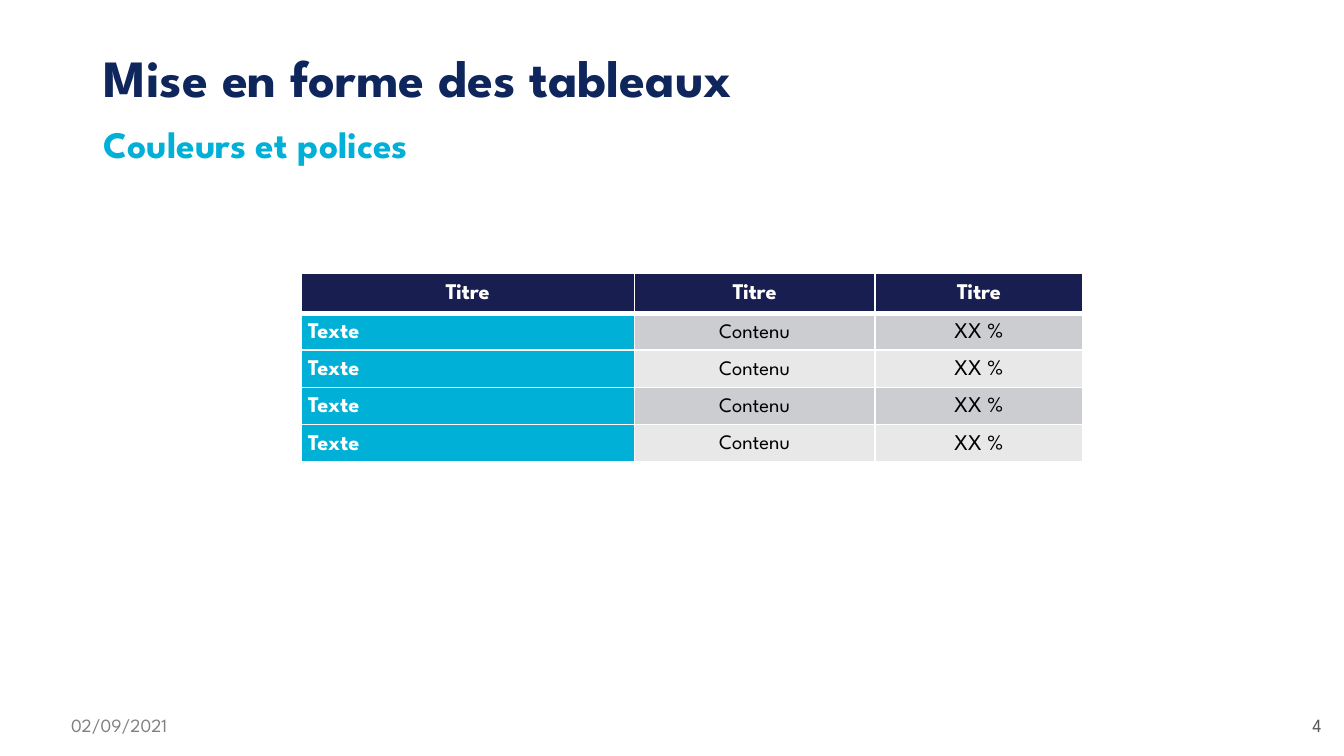
from lxml import etree
from pptx import Presentation
from pptx.dml.color import RGBColor
from pptx.enum.text import MSO_ANCHOR, MSO_AUTO_SIZE, PP_ALIGN
from pptx.oxml.ns import qn
from pptx.util import Inches, Pt

LEFT, CENTER, RIGHT = PP_ALIGN.LEFT, PP_ALIGN.CENTER, PP_ALIGN.RIGHT
TOP, MIDDLE = MSO_ANCHOR.TOP, MSO_ANCHOR.MIDDLE
FIXED = MSO_AUTO_SIZE.NONE

FONT = "League Spartan"
NAVY, CYAN, HEADER_BLUE = "0F265C", "00B0D7", "191E50"
WHITE, BLACK, DATE_GREY, NUMBER_GREY = "FFFFFF", "000000", "808080", "595959"
BANDS = ("CCCDD0", "E8E8E9")

GRID_STEP = Inches(0.1)
GRID_COLUMNS, GRID_ROWS = 100, 56.25

HEADINGS = ["Titre"] * 3
BODY = [["Texte", "Contenu", "XX %"]] * 4


def grid(*steps):
    """Turn grid columns and rows into slide lengths."""
    return [round(step * GRID_STEP) for step in steps]


def colour(hex_code):
    """Return the colour for a hex string."""
    return RGBColor.from_string(hex_code)


def write(frame, text, size=12, ink=BLACK, bold=False, align=LEFT, spacing=1.0):
    """Put one formatted paragraph in a text frame."""
    frame.text = text
    paragraph = frame.paragraphs[0]
    paragraph.alignment = align
    paragraph.line_spacing = spacing
    paragraph.space_before = Pt(0)
    font = paragraph.runs[0].font
    font.name, font.size, font.bold = FONT, Pt(size), bold
    font.color.rgb = colour(ink)


def place_heading(placeholder, box, text, anchor, **style):
    """Move a heading placeholder to its box and fill it."""
    placeholder.left, placeholder.top, placeholder.width, placeholder.height = grid(*box)
    frame = placeholder.text_frame
    frame.auto_size, frame.vertical_anchor, frame.word_wrap = FIXED, anchor, True
    write(frame, text, bold=True, **style)


def add_footer(slide, box, text, **style):
    """Add a small footer text in its box."""
    frame = slide.shapes.add_textbox(*grid(*box)).text_frame
    frame.word_wrap = True
    write(frame, text, size=10, **style)


def border_cell(cell, bottom):
    """Draw white borders around a cell, with the given bottom width."""
    properties = cell._tc.get_or_add_tcPr()
    widths = {"a:lnL": 1, "a:lnR": 1, "a:lnT": 1, "a:lnB": bottom}
    for position, (side, width) in enumerate(widths.items()):
        line = etree.Element(qn(side), w=str(Pt(width)))
        fill = etree.SubElement(line, qn("a:solidFill"))
        etree.SubElement(fill, qn("a:srgbClr"), val=WHITE)
        properties.insert(position, line)


def cell_style(row, column):
    """Return the fill and text format for a table position."""
    if row == 0:
        return HEADER_BLUE, dict(ink=WHITE, bold=True, align=CENTER)
    if column == 0:
        return CYAN, dict(ink=WHITE, bold=True)
    return BANDS[(row - 1) % 2], dict(size=11 if column == 1 else 12, align=CENTER)


def add_styled_table(slide, box, column_widths, header_height, row_height):
    """Add the banded table with its header row and label column."""
    records = [HEADINGS, *BODY]
    table = slide.shapes.add_table(len(records), len(HEADINGS), *grid(*box)).table
    for column, width in zip(table.columns, grid(*column_widths)):
        column.width = width
    for index, record in enumerate(records):
        table.rows[index].height = grid(row_height if index else header_height)[0]
        for position, text in enumerate(record):
            cell = table.cell(index, position)
            fill, style = cell_style(index, position)
            cell.fill.solid()
            cell.fill.fore_color.rgb = colour(fill)
            cell.vertical_anchor = MIDDLE
            cell.margin_left = cell.margin_right = Inches(0.05)
            cell.margin_top = cell.margin_bottom = Inches(0.05)
            write(cell.text_frame, text, spacing=1.15, **style)
            border_cell(cell, bottom=1 if index else 3)


def main():
    """Build and save the slide."""
    deck = Presentation()
    deck.slide_width, deck.slide_height = grid(GRID_COLUMNS, GRID_ROWS)
    slide = deck.slides.add_slide(deck.slide_layouts[0])
    title, subtitle = slide.placeholders
    place_heading(title, (6.7, 2.95, 75.6, 5.5), "Mise en forme des tableaux",
                  MIDDLE, size=28, ink=NAVY)
    place_heading(subtitle, (6.7, 8.5, 75.6, 3.9), "Couleurs et polices",
                  TOP, size=20, ink=CYAN)
    add_styled_table(slide, (22.4, 20.3, 58.2, 13.4), (24.8, 17.9, 15.5), 3, 2.6)
    add_footer(slide, (4.3, 52.65, 10.2, 3), "02/09/2021", ink=DATE_GREY)
    add_footer(slide, (89.4, 52.65, 9.9, 3), "4", ink=NUMBER_GREY, align=RIGHT)
    deck.save("out.pptx")


if __name__ == "__main__":
    main()
